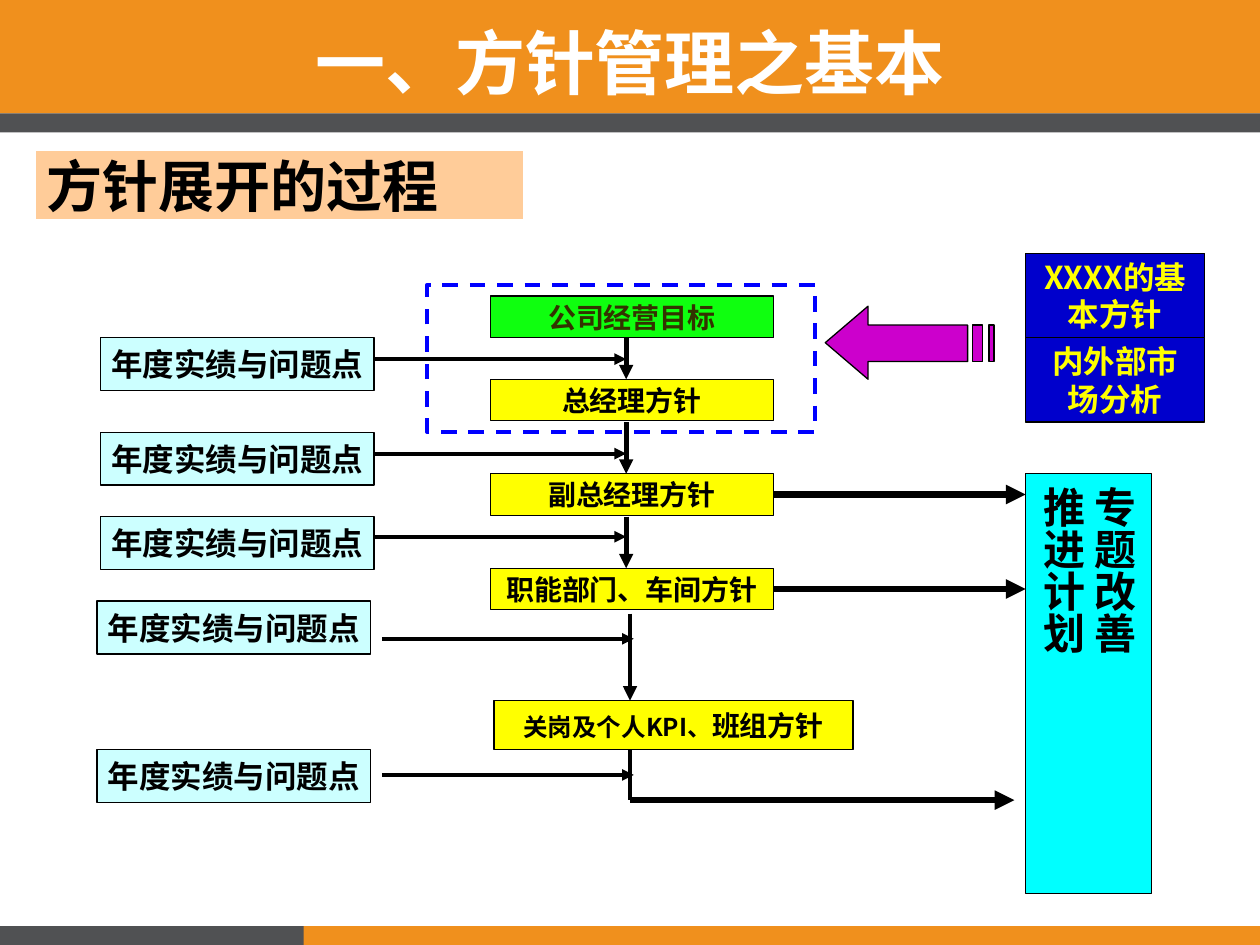
import pptx
import pptx.util
import pptx.dml.color
import pptx.enum.dml
import pptx.enum.shapes
import pptx.enum.text
import pptx.oxml
import pptx.oxml.ns
from lxml import etree

Inches, Pt = pptx.util.Inches, pptx.util.Pt
ALIGN = pptx.enum.text.PP_ALIGN
ANCHOR = pptx.enum.text.MSO_ANCHOR
FONT = "Noto Sans CJK SC"
COLORS = {
    "orange": "F0901D", "gray": "505153", "black": "000000", "white": "FFFFFF",
    "green": "00FF00", "olive": "333300", "yellow": "FFFF00", "frame": "0000FF",
    "magenta": "CC00CC", "navy": "0000CC", "pale": "CCFFFF", "cyan": "00FFFF",
    "peach": "FFCC99",
}


def color(name):
    return pptx.dml.color.RGBColor.from_string(COLORS[name])


def add_child(parent, tag, **attributes):
    return etree.SubElement(parent, pptx.oxml.ns.qn(tag), attributes)


class SlideBuilder:
    def __init__(self, slide):
        self.shapes = slide.shapes

    def paint(self, shape, fill, line, width):
        shape.shadow.inherit = False
        if fill:
            shape.fill.solid()
            shape.fill.fore_color.rgb = color(fill)
        else:
            shape.fill.background()
        if line:
            shape.line.color.rgb = color(line)
            shape.line.width = Pt(width)
        else:
            shape.line.fill.background()

    def label(self, shape, paragraphs, ink="black", align=ALIGN.CENTER,
              anchor=ANCHOR.MIDDLE, wrap=False):
        """Fill a shape with paragraphs, each a list of (text, size) runs."""
        frame = shape.text_frame
        frame.word_wrap = wrap
        frame.vertical_anchor = anchor
        for index, runs in enumerate(paragraphs):
            paragraph = frame.add_paragraph() if index else frame.paragraphs[0]
            paragraph.alignment = align
            for text, size in runs:
                run = paragraph.add_run()
                run.text = text
                for name, value in {"size": Pt(size), "bold": True, "name": FONT}.items():
                    setattr(run.font, name, value)
                run.font.color.rgb = color(ink)
                add_child(run._r.get_or_add_rPr(), "a:ea", typeface=FONT)

    def box(self, left, top, width, height, fill, line="black", weight=0.75,
            paragraphs=(), **text_format):
        shape = self.shapes.add_shape(
            pptx.enum.shapes.MSO_SHAPE.RECTANGLE,
            Inches(left), Inches(top), Inches(width), Inches(height))
        self.paint(shape, fill, line, weight)
        if paragraphs:
            self.label(shape, paragraphs, **text_format)
        return shape

    def title(self, left, top, width, height, text, size):
        box = self.shapes.add_textbox(Inches(left), Inches(top), Inches(width), Inches(height))
        self.label(box, [[(text, size)]], ink="white", anchor=ANCHOR.TOP, wrap=True)

    def line(self, x1, y1, x2, y2, width, arrow=True, source=None):
        """Draw a line; source is a box whose right side it starts from."""
        connector = self.shapes.add_connector(
            pptx.enum.shapes.MSO_CONNECTOR.STRAIGHT,
            Inches(x1), Inches(y1), Inches(x2), Inches(y2))
        if source is not None:
            connector.begin_connect(source, 3)
            connector.end_y = connector.begin_y
        connector.line.color.rgb = color("black")
        connector.line.width = Pt(width)
        properties = connector._element.spPr
        if arrow:
            add_child(properties.find(pptx.oxml.ns.qn("a:ln")), "a:tailEnd", type="triangle")
        add_child(properties, "a:effectLst")

    def outline(self, contours, fill):
        builder = None
        for contour in contours:
            start, *rest = [(Inches(x), Inches(y)) for x, y in contour]
            if builder is None:
                builder = self.shapes.build_freeform(*start)
            else:
                builder.move_to(*start)
            builder.add_line_segments(rest, close=True)
        self.paint(builder.convert_to_shape(), fill, "black", 0.75)


def bar(left, right, top=2.58, bottom=2.87):
    return [(left, top), (right, top), (right, bottom), (left, bottom)]


def main():
    deck = pptx.Presentation()
    deck.slide_width, deck.slide_height = Inches(10), Inches(7.5)
    page = SlideBuilder(deck.slides.add_slide(deck.slide_layouts[6]))

    for left, top, width, height, fill in [
            (0, 0, 10, 0.9, "orange"), (0, 0.9, 10, 0.15, "gray"),
            (1.95, 7.35, 8.05, 0.15, "orange"), (0, 7.35, 2.41, 0.15, "gray")]:
        page.box(left, top, width, height, fill, line=None)
    page.title(0, 0.11, 10, 0.77, "一、方针管理之基本", 40)
    page.box(0.27, 1.19, 3.89, 0.56, "peach", "white", 1.75,
             [[("方针展开的过程", 32)]], align=ALIGN.LEFT)

    goal = page.box(3.89, 2.35, 2.25, 0.33, "green",
                    paragraphs=[[("公司经营目标", 16)]], ink="olive")
    goal_color = goal._element.spPr.find(".//" + pptx.oxml.ns.qn("a:srgbClr"))
    add_child(goal_color, "a:alpha", val="94000")
    policies = [
        page.box(3.89, top, 2.25, 0.33, "yellow", paragraphs=[[(text, 16)]])
        for top, text in [(3.01, "总经理方针"), (3.76, "副总经理方针"),
                          (4.51, "职能部门、车间方针")]]
    page.box(3.92, 5.56, 2.85, 0.39, "yellow",
             paragraphs=[[("关岗及个人KPI、", 14), ("班组方针", 16)]])
    for x, start, end in [(4.97, 2.68, 3.01), (4.97, 3.35, 3.76),
                          (4.97, 4.1, 4.51), (5, 4.87, 5.56)]:
        page.line(x, start, x, end, 2.75)

    frame = page.box(3.39, 2.26, 3.08, 1.17, None, "frame", 2.25)
    frame.line.dash_style = pptx.enum.dml.MSO_LINE.DASH

    arrow_head = [(6.55, 2.72), (6.89, 2.43), (6.89, 2.58), (7.68, 2.58),
                  (7.68, 2.87), (6.89, 2.87), (6.89, 3.01)]
    page.outline([arrow_head, bar(7.72, 7.8), bar(7.85, 7.89)], "magenta")
    for top, text in [(2.68, "内外部市场分析"), (2.01, "XXXX的基本方针")]:
        page.box(8.14, top, 1.42, 0.67, "navy", paragraphs=[[(text, 18)]],
                 ink="yellow", wrap=True)

    for left, top, arrow_x, arrow_y in [
            (0.8, 2.68, 2.97, 2.85), (0.8, 3.43, 2.97, 3.6), (0.8, 4.1, 2.97, 4.26),
            (0.77, 4.77, 3.03, 5.07), (0.77, 5.95, 3.03, 6.15)]:
        page.box(left, top, 2.17, 0.42, "pale", paragraphs=[[("年度实绩与问题点", 18)]])
        page.line(arrow_x, arrow_y, arrow_x + 2, arrow_y, 2.25)

    plan = page.box(8.14, 3.76, 1, 3.33, "cyan",
                    paragraphs=[[("专题改善", 24)], [("推进计划", 24)]])
    plan.text_frame._txBody.bodyPr.set("vert", "eaVert")
    for policy, y in zip(policies[1:], (3.93, 4.68)):
        page.line(6.14, y, 8.14, y, 3.75, source=policy)
    page.line(5, 5.95, 5, 6.35, 2.25, arrow=False)
    page.line(5, 6.35, 8.05, 6.35, 3.75)

    deck.save("out.pptx")


if __name__ == "__main__":
    main()
